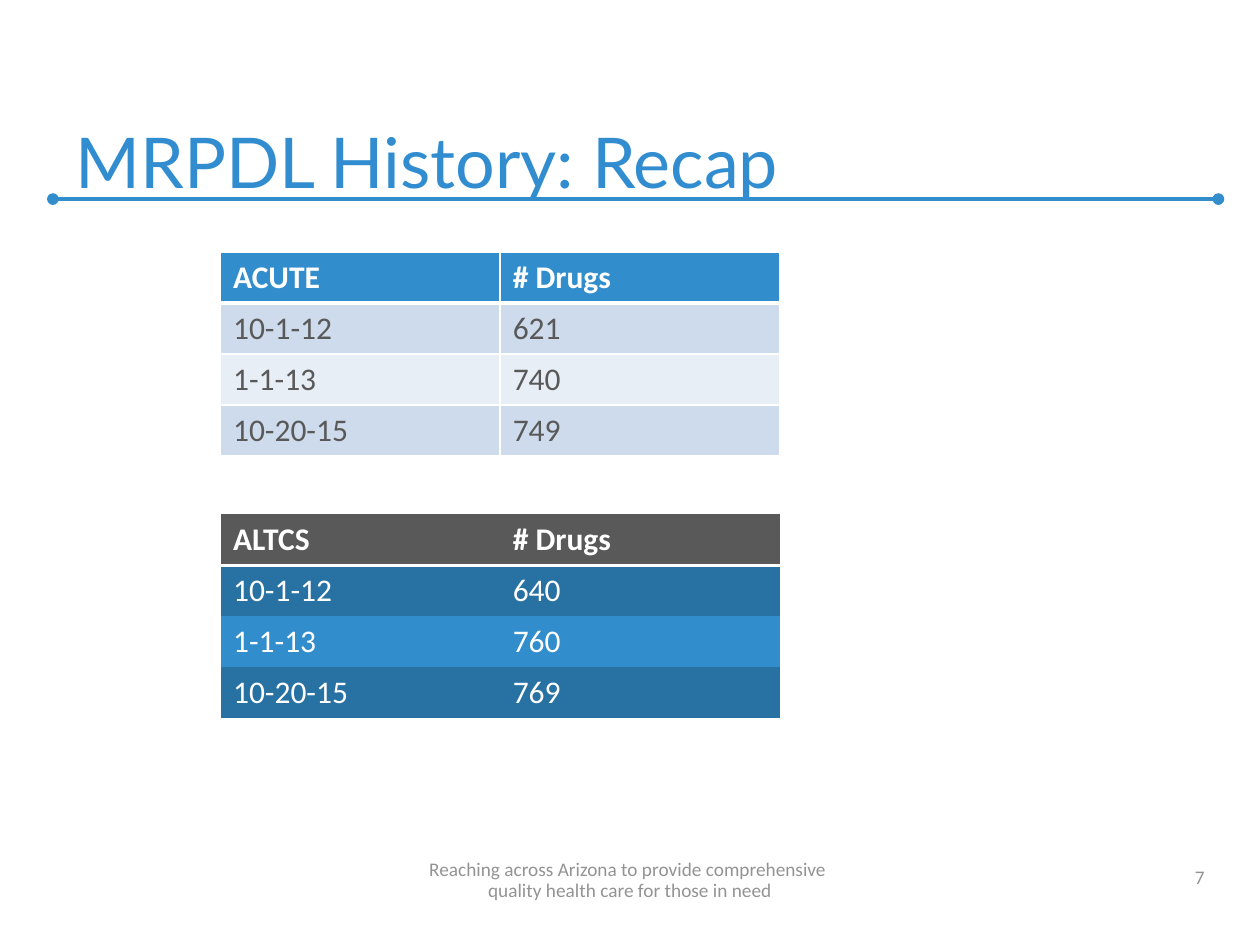
from lxml import etree
from pptx import Presentation
from pptx.dml.color import RGBColor
from pptx.enum.shapes import MSO_CONNECTOR
from pptx.enum.text import MSO_ANCHOR, PP_ALIGN
from pptx.oxml.ns import qn
from pptx.util import Inches, Pt

LEFT, MID, RIGHT = PP_ALIGN.LEFT, PP_ALIGN.CENTER, PP_ALIGN.RIGHT
BOTTOM = MSO_ANCHOR.BOTTOM
STRAIGHT = MSO_CONNECTOR.STRAIGHT
PLAIN = "{2D5ABB26-0587-4C30-8999-92F81FD0307C}"
WHITE, GREY, DARK, BLUE = "FFFFFF", "939393", "595959", "318DCC"

TEXTS = [
    (["7"], (7.33, 6.78, 2.33, 0.32), "Calibri", 11, GREY, RIGHT, None),
    (["MRPDL History: Recap"], (0.5, 0.33, 9, 1.33), "Lato", 40, "318DCF", LEFT, None),
    (["Reaching across Arizona to provide comprehensive ",
      "quality health care for those in need"],
     (0, 6.78, 10, 0.42), "Calibri", 11, GREY, MID, 12),
]
TABLES = [
    dict(top=2, head=BLUE, bands=("CEDBEC", "E8EEF6"), ink=DARK, grid=1, rule=3,
         rows=[("ACUTE", "# Drugs"), ("10-1-12", "621"),
               ("1-1-13", "740"), ("10-20-15", "749")]),
    dict(top=4.08, head=DARK, bands=("2771A3", BLUE), ink=WHITE, grid=0, rule=2,
         rows=[("ALTCS", "# Drugs"), ("10-1-12", "640"),
               ("1-1-13", "760"), ("10-20-15", "769")]),
]
SIDE, WIDE, HIGH = 1.75, 2.22, 0.405


def color(code):
    return RGBColor.from_string(code)


def add_run(para, text, face, size, ink, bold=False):
    run = para.add_run()
    run.text = text
    font = run.font
    font.name, font.size, font.bold = face, Pt(size), bold
    font.color.rgb = color(ink)


def add_text(slide, lines, box, face, size, ink, align, pitch):
    frame = slide.shapes.add_textbox(*map(Inches, box)).text_frame
    frame.word_wrap = True
    frame.vertical_anchor = BOTTOM
    para = frame.paragraphs[0]
    para.alignment = align
    if pitch:
        para.line_spacing = Pt(pitch)
    for i, line in enumerate(lines):
        if i:
            para.add_line_break()
        add_run(para, line, face, size, ink)


def add_rule(slide):
    line = slide.shapes.add_connector(
        STRAIGHT, Inches(0.42), Inches(1.58), Inches(9.67), Inches(1.58))
    line.line.color.rgb = color(BLUE)
    line.line.width = Pt(2.25)
    pen = line.line._get_or_add_ln()
    for end in ("a:headEnd", "a:tailEnd"):
        etree.SubElement(pen, qn(end), type="oval")
    etree.SubElement(line._element.spPr, qn("a:effectLst"))


def set_edges(cell, widths):
    props = cell._tc.get_or_add_tcPr()
    for i, (side, width) in enumerate(widths.items()):
        edge = etree.Element(qn("a:ln" + side), w=str(Pt(width)))
        if width:
            fill = etree.SubElement(edge, qn("a:solidFill"))
            etree.SubElement(fill, qn("a:srgbClr"), val=WHITE)
        else:
            etree.SubElement(edge, qn("a:noFill"))
        props.insert(i, edge)


def add_grid(slide, top, head, bands, ink, grid, rule, rows):
    count = len(rows[0])
    frame = slide.shapes.add_table(
        len(rows), count, Inches(SIDE), Inches(top),
        Inches(WIDE * count), Inches(HIGH * len(rows)))
    table = frame.table
    table._tbl.tblPr.find(qn("a:tableStyleId")).text = PLAIN
    for col in table.columns:
        col.width = Inches(WIDE)
    for r, row in enumerate(rows):
        table.rows[r].height = Inches(HIGH)
        for c, text in enumerate(row):
            cell = table.cell(r, c)
            cell.fill.solid()
            cell.fill.fore_color.rgb = color(bands[(r - 1) % 2] if r else head)
            add_run(cell.text_frame.paragraphs[0], text, "Calibri", 18,
                    ink if r else WHITE, r == 0)
            edges = dict.fromkeys("LRTB", grid)
            if r == 0:
                edges["B"] = rule
            elif r == 1:
                edges["T"] = rule
            set_edges(cell, edges)


def main():
    deck = Presentation()
    deck.slide_width, deck.slide_height = Inches(10), Inches(7.5)
    slide = deck.slides.add_slide(deck.slide_layouts[6])
    add_rule(slide)
    for item in TEXTS:
        add_text(slide, *item)
    for item in TABLES:
        add_grid(slide, **item)
    deck.save("out.pptx")


if __name__ == "__main__":
    main()
